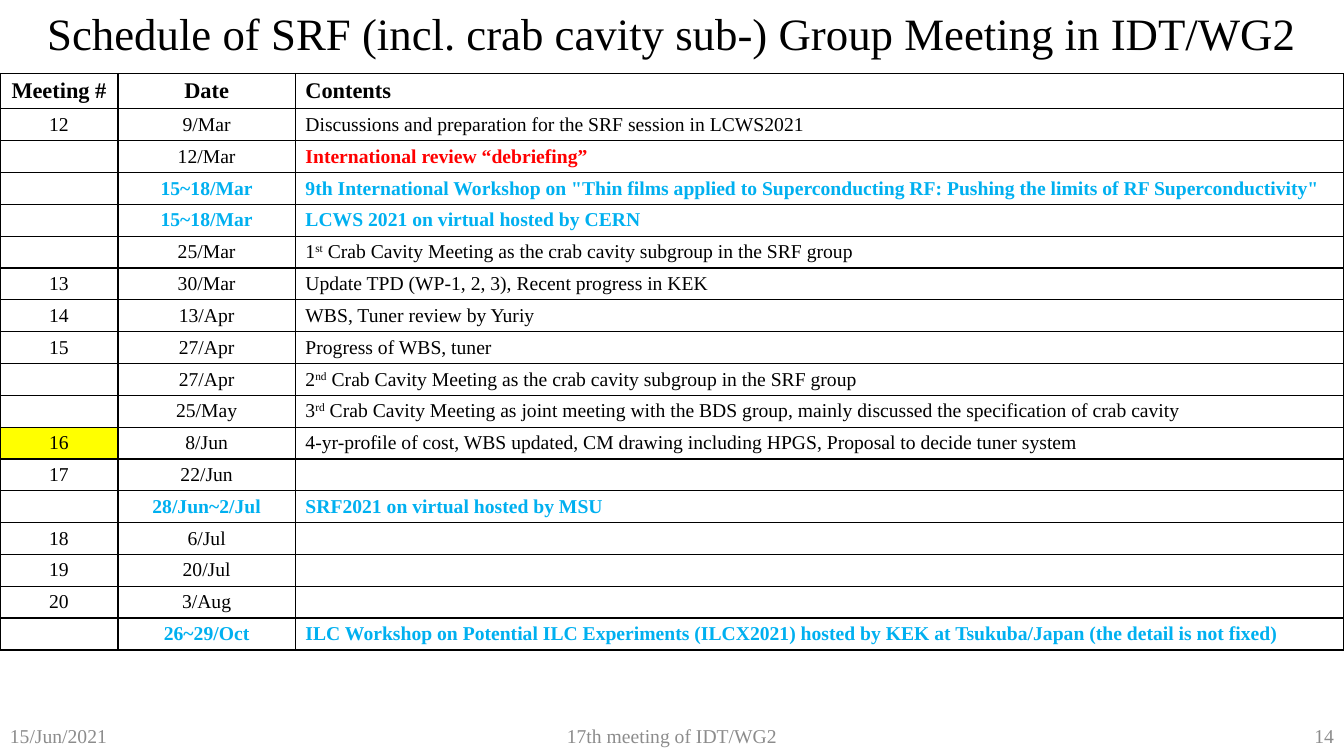
from dataclasses import dataclass

import pptx
import pptx.dml.color
import pptx.enum.text
import pptx.oxml
import pptx.oxml.ns
import pptx.util
from pptx.dml.color import RGBColor
from pptx.enum.text import MSO_ANCHOR, MSO_AUTO_SIZE, PP_ALIGN
from pptx.util import Inches

BLACK = RGBColor(0x00, 0x00, 0x00)
WHITE = RGBColor(0xFF, 0xFF, 0xFF)
RED = RGBColor(0xFF, 0x00, 0x00)
SKY = RGBColor(0x00, 0xB0, 0xF0)
YELLOW = RGBColor(0xFF, 0xFF, 0x00)
GREY = RGBColor(0x8C, 0x8C, 0x8C)

FONT = "Times New Roman"
SLIDE_WIDTH, SLIDE_HEIGHT = 13.33, 7.5
TABLE_TOP, HEADER_HEIGHT, MEETING_ROWS_HEIGHT = 0.73, 0.35, 5.37
COLUMN_WIDTHS = (1.17, 1.76, 10.4)
COLUMN_ALIGNS = (PP_ALIGN.CENTER, PP_ALIGN.CENTER, PP_ALIGN.LEFT)


@dataclass
class Meeting:
    """A row of the schedule; text between carets is superscript."""
    number: str
    date: str
    contents: str = ""
    date_color: RGBColor = BLACK
    contents_color: RGBColor = BLACK
    number_fill: RGBColor = WHITE


@dataclass
class FooterItem:
    text: str
    left: float
    width: float
    align: PP_ALIGN


def workshop(date: str, contents: str) -> Meeting:
    return Meeting("", date, contents, SKY, SKY)


MEETINGS = [
    Meeting("12", "9/Mar", "Discussions and preparation for the SRF session in LCWS2021"),
    Meeting("", "12/Mar", "International review “debriefing”", contents_color=RED),
    workshop("15~18/Mar", '9th International Workshop on "Thin films applied to Superconducting RF: '
             'Pushing the limits of RF Superconductivity"'),
    workshop("15~18/Mar", "LCWS 2021 on virtual hosted by CERN"),
    Meeting("", "25/Mar", "1^st^ Crab Cavity Meeting as the crab cavity subgroup in the SRF group"),
    Meeting("13", "30/Mar", "Update TPD (WP-1, 2, 3), Recent progress in KEK"),
    Meeting("14", "13/Apr", "WBS, Tuner review by Yuriy"),
    Meeting("15", "27/Apr", "Progress of WBS, tuner"),
    Meeting("", "27/Apr", "2^nd^ Crab Cavity Meeting as the crab cavity subgroup in the SRF group"),
    Meeting("", "25/May", "3^rd^ Crab Cavity Meeting as joint meeting with the BDS group, "
            "mainly discussed the specification of crab cavity"),
    Meeting("16", "8/Jun", "4-yr-profile of cost, WBS updated, CM drawing including HPGS, "
            "Proposal to decide tuner system", number_fill=YELLOW),
    Meeting("17", "22/Jun"),
    workshop("28/Jun~2/Jul", "SRF2021 on virtual hosted by MSU"),
    Meeting("18", "6/Jul"),
    Meeting("19", "20/Jul"),
    Meeting("20", "3/Aug"),
    workshop("26~29/Oct", "ILC Workshop on Potential ILC Experiments (ILCX2021) hosted by KEK "
             "at Tsukuba/Japan (the detail is not fixed)"),
]

FOOTER = [
    FooterItem("15/Jun/2021", 0, 3, PP_ALIGN.LEFT),
    FooterItem("17th meeting of IDT/WG2", 0, SLIDE_WIDTH, PP_ALIGN.CENTER),
    FooterItem("14", SLIDE_WIDTH - 3, 3, PP_ALIGN.RIGHT),
]


def write_text(frame, text: str, *, size: float = 14, color: RGBColor = BLACK,
               bold: bool = False, align: PP_ALIGN = PP_ALIGN.LEFT) -> None:
    frame.word_wrap = True
    paragraph = frame.paragraphs[0]
    paragraph.alignment = align
    if not text:  # an empty cell keeps the text size, so its row stays low
        end = pptx.oxml.ns.qn("a:endParaRPr")
        paragraph._p.makeelement(end)
        paragraph._p.append(paragraph._p.makeelement(end, {"sz": str(int(size * 100))}))
        return
    for index, part in enumerate(text.split("^")):
        run = paragraph.add_run()
        run.text = part
        run.font.name = FONT
        run.font.size = pptx.util.Pt(size)
        run.font.bold = bold
        run.font.color.rgb = color
        if index % 2:
            run._r.get_or_add_rPr().set("baseline", "30000")


def format_cell(cell, fill: RGBColor) -> None:
    cell.margin_top = cell.margin_bottom = Inches(0.04)
    cell.vertical_anchor = MSO_ANCHOR.MIDDLE
    properties = cell._tc.get_or_add_tcPr()
    for side in ("lnL", "lnR", "lnT", "lnB"):
        properties.append(pptx.oxml.parse_xml(
            f'<a:{side} {pptx.oxml.ns.nsdecls("a")} w="12700">'
            f'<a:solidFill><a:srgbClr val="{BLACK}"/></a:solidFill></a:{side}>'))
    cell.fill.solid()
    cell.fill.fore_color.rgb = fill


def add_title(slide) -> None:
    title = slide.shapes.title
    title.left, title.top = Inches(0), Inches(0)
    title.width, title.height = Inches(SLIDE_WIDTH), Inches(0.64)
    title.text_frame.auto_size = MSO_AUTO_SIZE.NONE
    title.text_frame.vertical_anchor = MSO_ANCHOR.MIDDLE
    write_text(title.text_frame, "Schedule of SRF (incl. crab cavity sub-) Group Meeting in IDT/WG2",
               size=32, align=PP_ALIGN.CENTER)


def add_schedule(slide) -> None:
    schedule = slide.shapes.add_table(
        len(MEETINGS) + 1, len(COLUMN_WIDTHS), Inches(0), Inches(TABLE_TOP),
        Inches(SLIDE_WIDTH), Inches(HEADER_HEIGHT + MEETING_ROWS_HEIGHT)).table
    for column, width in zip(schedule.columns, COLUMN_WIDTHS):
        column.width = Inches(width)

    # Header row
    schedule.rows[0].height = Inches(HEADER_HEIGHT)
    for cell, heading, align in zip(schedule.rows[0].cells, ("Meeting #", "Date", "Contents"),
                                    COLUMN_ALIGNS):
        format_cell(cell, WHITE)
        write_text(cell.text_frame, heading, size=16, bold=True, align=align)

    # Meeting rows
    for row, meeting in zip(list(schedule.rows)[1:], MEETINGS):
        row.height = Inches(MEETING_ROWS_HEIGHT / len(MEETINGS))
        entries = ((meeting.number, BLACK, meeting.number_fill),
                   (meeting.date, meeting.date_color, WHITE),
                   (meeting.contents, meeting.contents_color, WHITE))
        for cell, (text, color, fill), align in zip(row.cells, entries, COLUMN_ALIGNS):
            format_cell(cell, fill)
            write_text(cell.text_frame, text, color=color, bold=color != BLACK, align=align)


def add_footer(slide) -> None:
    for item in FOOTER:
        box = slide.shapes.add_textbox(Inches(item.left), Inches(7.1),
                                       Inches(item.width), Inches(0.4))
        box.text_frame.vertical_anchor = MSO_ANCHOR.MIDDLE
        write_text(box.text_frame, item.text, color=GREY, align=item.align)


def main() -> None:
    presentation = pptx.Presentation()
    presentation.slide_width = Inches(SLIDE_WIDTH)
    presentation.slide_height = Inches(SLIDE_HEIGHT)
    slide = presentation.slides.add_slide(presentation.slide_layouts[5])
    add_footer(slide)
    add_schedule(slide)
    add_title(slide)
    presentation.save("out.pptx")


if __name__ == "__main__":
    main()
